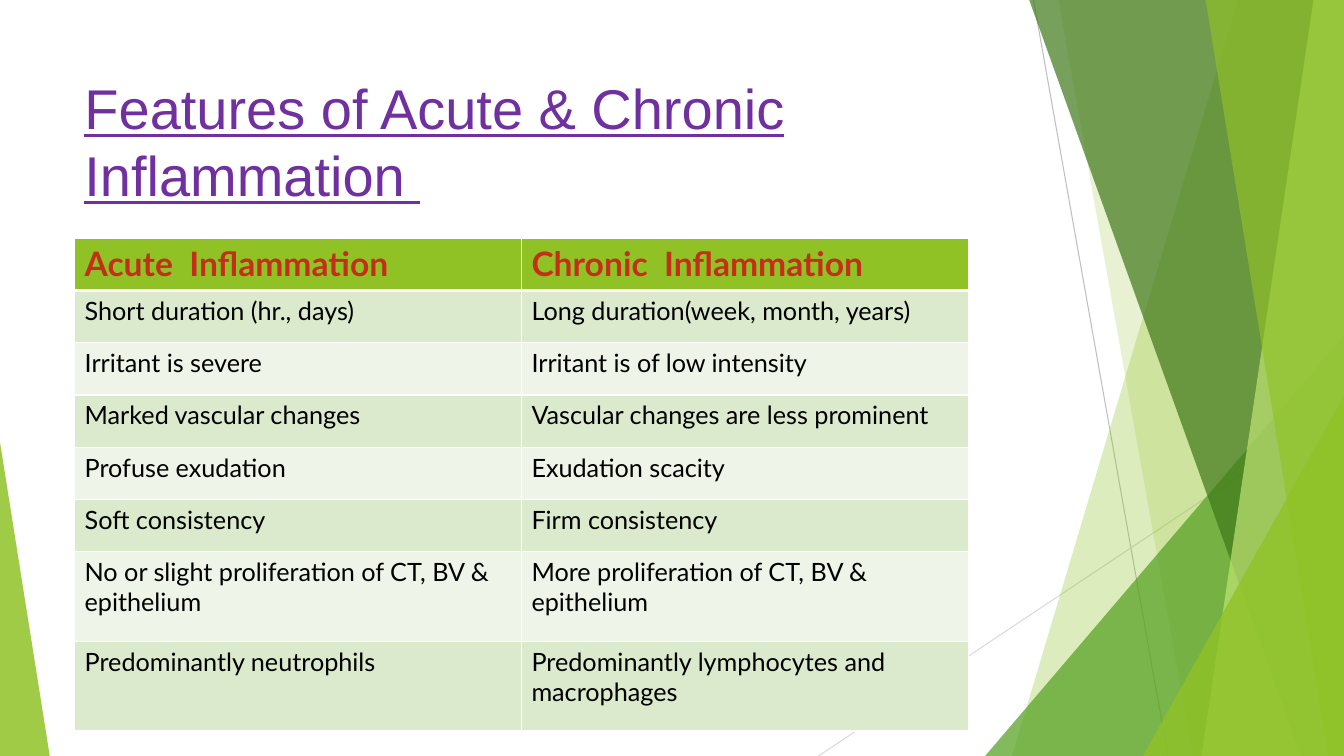
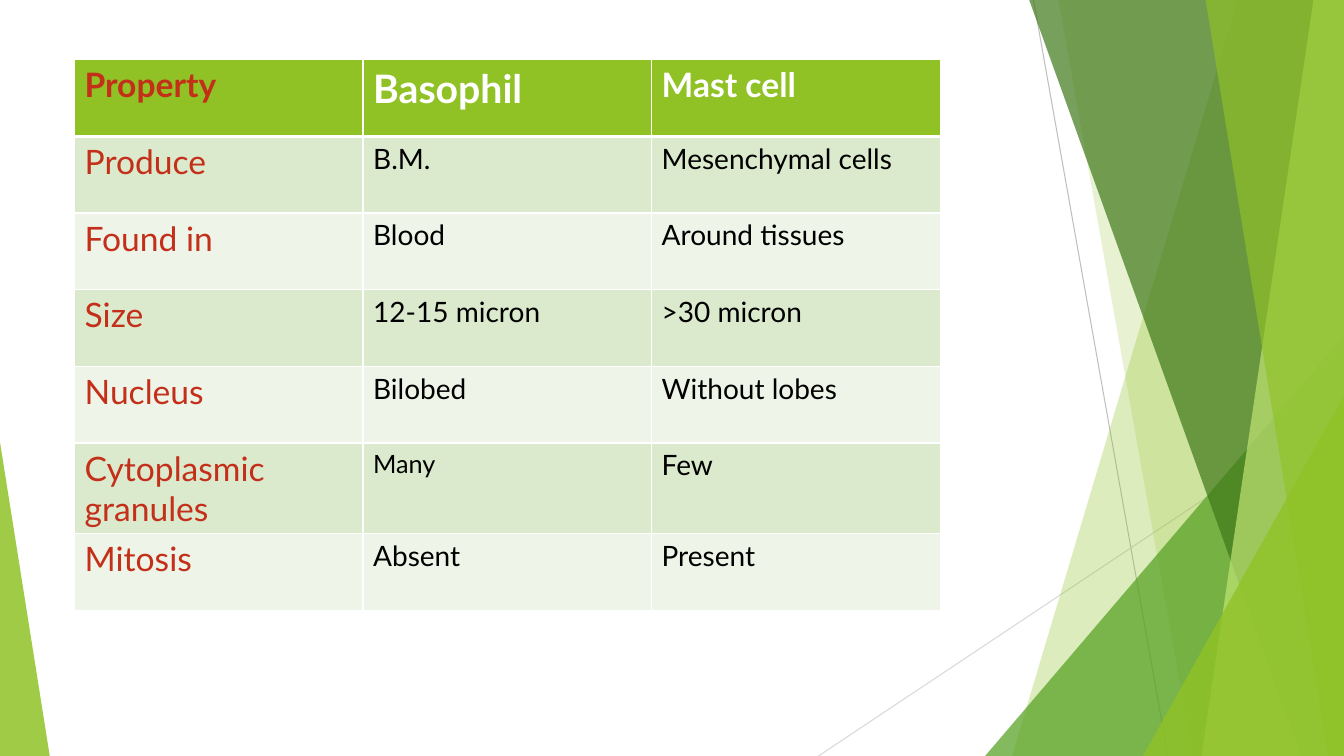
from dataclasses import dataclass

from lxml.etree import SubElement
from pptx import Presentation
from pptx.dml.color import RGBColor
from pptx.enum.shapes import MSO_CONNECTOR as Connector, MSO_SHAPE as Preset
from pptx.enum.text import MSO_ANCHOR as Anchor
from pptx.oxml import parse_xml
from pptx.oxml.ns import nsdecls, qn
from pptx.util import Inches, Pt

GREEN, LEAF, FOREST, LIME = "90C226", "54A021", "3F7819", "C0E474"
BAND_DARK, BAND_LIGHT = "DBE9CD", "EEF4E8"
WHITE, BLACK, RED, PURPLE = "FFFFFF", "000000", "C42F1A", "7030A0"
TITLE_FONT, TABLE_FONT = "Arial", "Lato"

# Ribbons reach the right edge: left corner at top and bottom (% of width), colour, opacity
BACK_RIBBONS = [(92.1, 75.3, GREEN, 30), (78.75, 88.75, GREEN, 20)]
FRONT_RIBBONS = [(76.58, 96.8, FOREST, 70), (97.73, 89.4, LIME, 70), (89.7, 98.85, GREEN, 65)]

ACUTE_CHRONIC = [
    ("Acute  Inflammation", "Chronic  Inflammation"),
    ("Short duration (hr., days)", "Long duration(week, month, years)"),
    ("Irritant is severe", "Irritant is of low intensity"),
    ("Marked vascular changes", "Vascular changes are less prominent"),
    ("Profuse exudation", "Exudation scacity"),
    ("Soft consistency", "Firm consistency"),
    ("No or slight proliferation of CT, BV & epithelium",
     "More proliferation of CT, BV & epithelium"),
    ("Predominantly neutrophils", "Predominantly lymphocytes and macrophages"),
]
CELL_TYPES = [
    ("Property", "Basophil", "Mast cell"),
    ("Produce", "B.M.", "Mesenchymal cells"),
    ("Found in", "Blood", "Around tissues"),
    ("Size", "12-15 micron", ">30 micron"),
    ("Nucleus", "Bilobed", "Without lobes"),
    ("Cytoplasmic granules", "Many", "Few"),
    ("Mitosis", "Absent", "Present"),
]


@dataclass
class Box:
    left: int
    top: int
    width: int
    height: int

    def point(self, x, y):
        """Position given in percent of the box."""
        return round(self.left + self.width * x / 100), round(self.top + self.height * y / 100)

    def inner(self, x, y, width, height):
        """Inner box given in percent of this one."""
        return Box(*self.point(x, y), round(self.width * width / 100),
                   round(self.height * height / 100))

    def frame(self):
        return self.left, self.top, self.width, self.height


def color(value):
    return RGBColor.from_string(value)


def paint(shape, fill, opacity):
    shape.shadow.inherit = False
    shape.line.fill.background()
    shape.fill.solid()
    shape.fill.fore_color.rgb = color(fill)
    tint = shape.element.spPr.find(qn("a:solidFill")).find(qn("a:srgbClr"))
    SubElement(tint, qn("a:alpha"), val=str(opacity * 1000))


def format_text(frame, font_name, size, ink, bold=False, underline=False):
    for paragraph in frame.paragraphs:
        for run in paragraph.runs:
            font = run.font
            font.name, font.size, font.bold, font.underline = font_name, Pt(size), bold, underline
            font.color.rgb = color(ink)


def add_hairline(slide, box, start, end, ink):
    hairline = slide.shapes.add_connector(Connector.STRAIGHT, *box.point(*start), *box.point(*end))
    hairline.line.color.rgb = color(ink)
    hairline.line.width = Pt(0.75)
    SubElement(hairline.element.spPr, qn("a:effectLst"))


def add_ribbon(slide, box, top_x, bottom_x, fill, opacity):
    outline = slide.shapes.build_freeform(*box.point(top_x, 0), scale=1.0)
    outline.add_line_segments([box.point(100, 0), box.point(100, 100), box.point(bottom_x, 100)])
    paint(outline.convert_to_shape(), fill, opacity)


def add_wedge(slide, box, apex, fill, opacity):
    wedge = slide.shapes.add_shape(Preset.ISOSCELES_TRIANGLE, *box.frame())
    wedge.adjustments[0] = apex
    paint(wedge, fill, opacity)


def add_backdrop(slide, page):
    add_hairline(slide, page, (76.9, 0), (86.9, 100), "BFBFBF")
    add_hairline(slide, page, (100, 53.7), (60.9, 100), "D9D9D9")
    for ribbon in BACK_RIBBONS:
        add_ribbon(slide, page, *ribbon)
    add_wedge(slide, page.inner(73.3, 44.4, 26.7, 55.6), 1, LEAF, 72)
    for ribbon in FRONT_RIBBONS:
        add_ribbon(slide, page, *ribbon)
    add_wedge(slide, page.inner(85.05, 52.4, 14.95, 47.6), 1, GREEN, 80)
    add_wedge(slide, page.inner(0, 58.5, 3.7, 41.5), 0, GREEN, 85)


def add_title(slide, box, wording):
    frame = slide.shapes.add_textbox(*box.frame()).text_frame
    frame.word_wrap = True
    frame.vertical_anchor = Anchor.BOTTOM
    frame.text = wording
    format_text(frame, TITLE_FONT, 40, PURPLE, underline=True)


def add_borders(cell, top, bottom):
    """White borders; top and bottom are widths in points."""
    properties = cell._tc.get_or_add_tcPr()
    for place, (side, width) in enumerate([("L", 1), ("R", 1), ("T", top), ("B", bottom)]):
        properties.insert(place, parse_xml(
            f'<a:ln{side} {nsdecls("a")} w="{int(Pt(width))}"><a:solidFill>'
            f'<a:srgbClr val="{WHITE}"/></a:solidFill></a:ln{side}>'))


def add_banded_table(slide, box, rows, row_weights, text_style):
    """text_style(row, column) gives the size and colour of a cell's text."""
    columns = len(rows[0])
    table = slide.shapes.add_table(len(rows), columns, *box.frame()).table
    table.horz_banding = False
    for column in table.columns:
        column.width = box.width // columns
    for r, (entries, weight) in enumerate(zip(rows, row_weights)):
        table.rows[r].height = round(box.height * weight / sum(row_weights))
        fill = GREEN if r == 0 else BAND_DARK if r % 2 else BAND_LIGHT
        for c, entry in enumerate(entries):
            cell = table.cell(r, c)
            cell.fill.solid()
            cell.fill.fore_color.rgb = color(fill)
            add_borders(cell, 3 if r == 1 else 1, 3 if r == 0 else 1)
            cell.text_frame.text = entry
            format_text(cell.text_frame, TABLE_FONT, *text_style(r, c), bold=r == 0)


def inflammation_style(row, column):
    return (24, RED) if row == 0 else (18, BLACK)


def cell_type_style(row, column):
    if column == 0:
        return 24, RED
    if row == 0:
        return (28 if column == 1 else 24), WHITE
    return (18 if CELL_TYPES[row][column] == "Many" else 20), BLACK


def build_inflammation_slide(slide, page):
    add_backdrop(slide, page)
    add_title(slide, page.inner(5.55, 8.9, 70.5, 19.2),
              "Features of Acute & Chronic Inflammation ")
    add_banded_table(slide, page.inner(5.55, 31.5, 66.5, 65.2), ACUTE_CHRONIC,
                     [7] * 6 + [12] * 2, inflammation_style)


def build_cell_type_slide(slide, page):
    add_backdrop(slide, page)
    add_banded_table(slide, page.inner(5.55, 7.9, 64.4, 71), CELL_TYPES,
                     [1] * len(CELL_TYPES), cell_type_style)


def main():
    deck = Presentation()
    deck.slide_width, deck.slide_height = Inches(13.33), Inches(7.5)
    page = Box(0, 0, deck.slide_width, deck.slide_height)
    for build in (build_inflammation_slide, build_cell_type_slide):
        build(deck.slides.add_slide(deck.slide_layouts[6]), page)
    deck.save("out.pptx")


if __name__ == "__main__":
    main()
